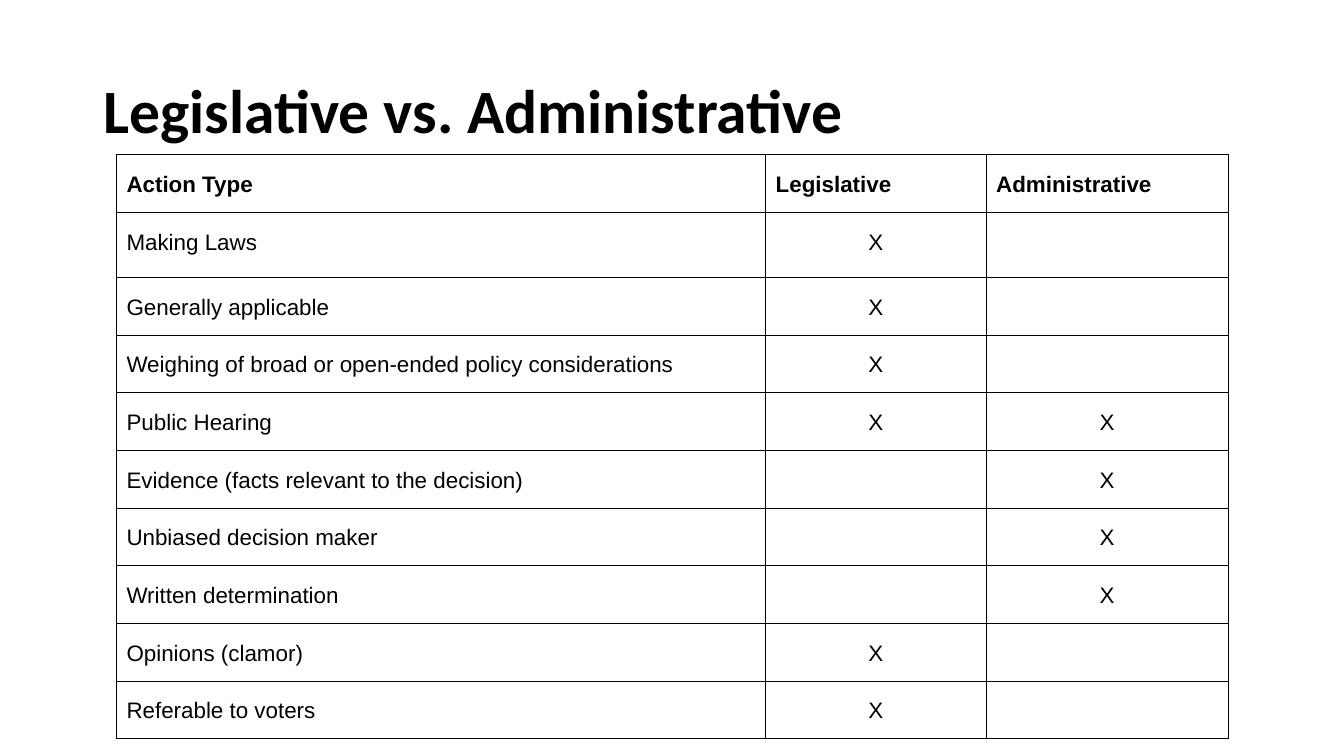
from lxml import etree
from pptx import Presentation
from pptx.dml.color import RGBColor
from pptx.enum.text import MSO_ANCHOR, MSO_AUTO_SIZE, PP_ALIGN
from pptx.oxml.ns import qn
from pptx.util import Pt

LEFT, CENTER = PP_ALIGN.LEFT, PP_ALIGN.CENTER
MIDDLE = MSO_ANCHOR.MIDDLE
NO_FIT = MSO_AUTO_SIZE.NONE
BLACK = "000000"

COLS = [347.8, 118.1, 129.6]
ROW, TALL = 30.9, 34.8
HEAD = ["Action Type", "Legislative", "Administrative"]
# Each action with its marks: L = legislative, A = administrative
ACTS = [
    ("Making Laws", "L"),
    ("Generally applicable", "L"),
    ("Weighing of broad or open-ended policy considerations", "L"),
    ("Public Hearing", "LA"),
    ("Evidence (facts relevant to the decision)", "A"),
    ("Unbiased decision maker", "A"),
    ("Written determination", "A"),
    ("Opinions (clamor)", "L"),
    ("Referable to voters", "L"),
]


def color(code):
    return RGBColor.from_string(code)


def style(para, name, size, bold, align, space):
    para.alignment = align
    para.line_spacing = space
    font = para.font
    font.name, font.size, font.bold = name, Pt(size), bold
    font.color.rgb = color(BLACK)


def inset(part, side, end):
    part.margin_left = part.margin_right = Pt(side)
    part.margin_top = part.margin_bottom = Pt(end)


def border(cell, code, width):
    props = cell._tc.get_or_add_tcPr()
    for i, tag in enumerate(("a:lnL", "a:lnR", "a:lnT", "a:lnB")):
        line = etree.Element(qn(tag), w=str(Pt(width)))
        fill = etree.SubElement(line, qn("a:solidFill"))
        etree.SubElement(fill, qn("a:srgbClr"), val=code)
        props.insert(i, line)


def add_title(slide, text, x, y, w, h):
    title = slide.shapes.title
    title.left, title.top, title.width, title.height = map(Pt, (x, y, w, h))
    frame = title.text_frame
    frame.text = text
    frame.word_wrap = True
    frame.auto_size = NO_FIT
    frame.vertical_anchor = MIDDLE
    inset(frame, 5.4, 2.7)
    style(frame.paragraphs[0], "Calibri", 33, True, LEFT, 0.9)


def add_grid(slide, x, y):
    rows = [HEAD] + [
        [act] + ["X" if key in marks else "" for key in "LA"]
        for act, marks in ACTS
    ]
    high = [ROW, TALL] + [ROW] * (len(rows) - 2)
    table = slide.shapes.add_table(
        len(rows), len(COLS), Pt(x), Pt(y), Pt(sum(COLS)), Pt(sum(high))
    ).table
    table.first_row = table.horz_banding = False
    for col, width in zip(table.columns, COLS):
        col.width = Pt(width)
    for r, texts in enumerate(rows):
        table.rows[r].height = Pt(high[r])
        for c, text in enumerate(texts):
            cell = table.cell(r, c)
            cell.fill.background()
            border(cell, BLACK, 0.6)
            if text:
                cell.text = text
                inset(cell, 5.4, 7.2)
                align = CENTER if r and c else LEFT
                para = cell.text_frame.paragraphs[0]
                style(para, "Arial", 12, r == 0, align, 1.15)


def main():
    deck = Presentation()
    deck.slide_width, deck.slide_height = Pt(720), Pt(405)
    slide = deck.slides.add_slide(deck.slide_layouts[5])
    add_title(slide, "Legislative vs. Administrative", 50, 21.6, 620, 78.5)
    add_grid(slide, 62.4, 83)
    deck.save("out.pptx")


if __name__ == "__main__":
    main()
